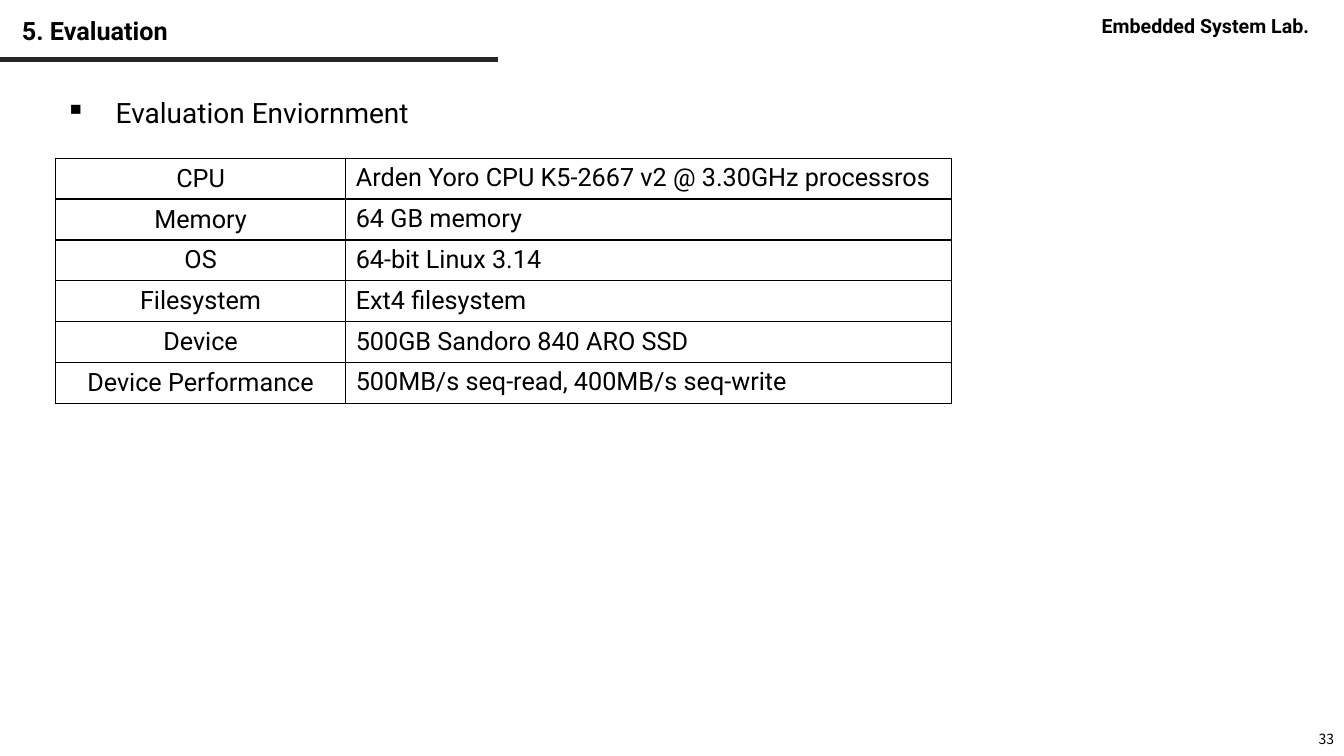
import pptx
import pptx.dml.color
import pptx.enum.shapes
import pptx.enum.text
import pptx.oxml
import pptx.oxml.ns
import pptx.util
from lxml import etree

Pt = pptx.util.Pt
ALIGN = pptx.enum.text.PP_ALIGN
ANCHOR = pptx.enum.text.MSO_ANCHOR
BLACK = pptx.dml.color.RGBColor(0x00, 0x00, 0x00)
RULE_GREY = pptx.dml.color.RGBColor(0x26, 0x26, 0x26)
TEXT_FONT = "Roboto"
NUMBER_FONT = "Noto Sans CJK KR"

ENVIRONMENT = [
    ("CPU", "Arden Yoro CPU K5-2667 v2 @ 3.30GHz processros"),
    ("Memory", "64 GB memory"),
    ("OS", "64-bit Linux 3.14"),
    ("Filesystem", "Ext4 filesystem"),
    ("Device", "500GB Sandoro 840 ARO SSD"),
    ("Device Performance", "500MB/s seq-read, 400MB/s seq-write"),
]


def add_run(paragraph, text, size, bold=False, font=TEXT_FONT):
    run = paragraph.add_run()
    run.text = text
    run.font.name = font
    run.font.size = Pt(size)
    run.font.bold = bold
    run.font.color.rgb = BLACK


def add_text_box(slide, box, anchor=ANCHOR.TOP, wrap=True):
    """Add an empty text box and return its first paragraph."""
    frame = slide.shapes.add_textbox(*map(Pt, box)).text_frame
    frame.word_wrap = wrap
    frame.vertical_anchor = anchor
    return frame.paragraphs[0]


def add_header(slide, left, top, width):
    title = add_text_box(slide, (left + 8.6, top + 8.6, 699, 28.8), ANCHOR.MIDDLE)
    title.line_spacing = 0.9
    add_run(title, "5. Evaluation", 18, bold=True)

    lab = add_text_box(slide, (left + width - 180.2, top + 6.5, 179.3, 24.5), wrap=False)
    add_run(lab, "Embedded System Lab.", 14, bold=True)

    rule_top = Pt(top + 42.5)
    rule = slide.shapes.add_connector(
        pptx.enum.shapes.MSO_CONNECTOR.STRAIGHT,
        Pt(left), rule_top, Pt(left + 355.7), rule_top)
    rule.line.color.rgb = RULE_GREY
    rule.line.width = Pt(3)
    etree.SubElement(rule._element.spPr, pptx.oxml.ns.qn("a:effectLst"))


def add_bullet_heading(slide, left, top, width, height):
    paragraph = add_text_box(slide, (left, top, width, height))
    properties = paragraph._p.get_or_add_pPr()
    properties.set("marL", str(Pt(36)))
    properties.set("indent", str(-Pt(36)))
    bullet = etree.SubElement(properties, pptx.oxml.ns.qn("a:buChar"))
    bullet.set("char", "▪")
    add_run(paragraph, "Evaluation Enviornment", 20)


def add_borders(cell):
    properties = cell._tc.get_or_add_tcPr()
    for position, side in enumerate(("lnL", "lnR", "lnT", "lnB")):
        border = pptx.oxml.parse_xml(
            f'<a:{side} {pptx.oxml.ns.nsdecls("a")} w="{Pt(1)}">'
            f'<a:solidFill><a:srgbClr val="{BLACK}"/></a:solidFill></a:{side}>')
        properties.insert(position, border)


def add_environment_table(slide, left, top, width, height):
    label_width = 207.4
    table = slide.shapes.add_table(
        len(ENVIRONMENT), 2, Pt(left), Pt(top), Pt(width), Pt(height)).table
    table.first_row = False
    table.horz_banding = False
    table.columns[0].width = Pt(label_width)
    table.columns[1].width = Pt(width - label_width)
    for row, texts in zip(table.rows, ENVIRONMENT):
        for column, (cell, text) in enumerate(zip(row.cells, texts)):
            cell.fill.background()
            add_borders(cell)
            paragraph = cell.text_frame.paragraphs[0]
            if column == 0:
                cell.vertical_anchor = ANCHOR.MIDDLE
                paragraph.alignment = ALIGN.CENTER
            add_run(paragraph, text, 18)


def add_slide_number(slide, left, top, width, height):
    paragraph = add_text_box(slide, (left, top, width, height), ANCHOR.MIDDLE)
    paragraph.alignment = ALIGN.RIGHT
    add_run(paragraph, "33", 10, font=NUMBER_FONT)


def main():
    presentation = pptx.Presentation()
    presentation.slide_width = Pt(960)
    presentation.slide_height = Pt(540)
    slide = presentation.slides.add_slide(presentation.slide_layouts[6])
    add_header(slide, 0, 0, 960)
    add_slide_number(slide, 744, 516.2, 216, 23)
    add_bullet_heading(slide, 39.6, 64.8, 485.3, 433.4)
    add_environment_table(slide, 39.6, 113, 640, 175.2)
    presentation.save("out.pptx")


if __name__ == "__main__":
    main()
